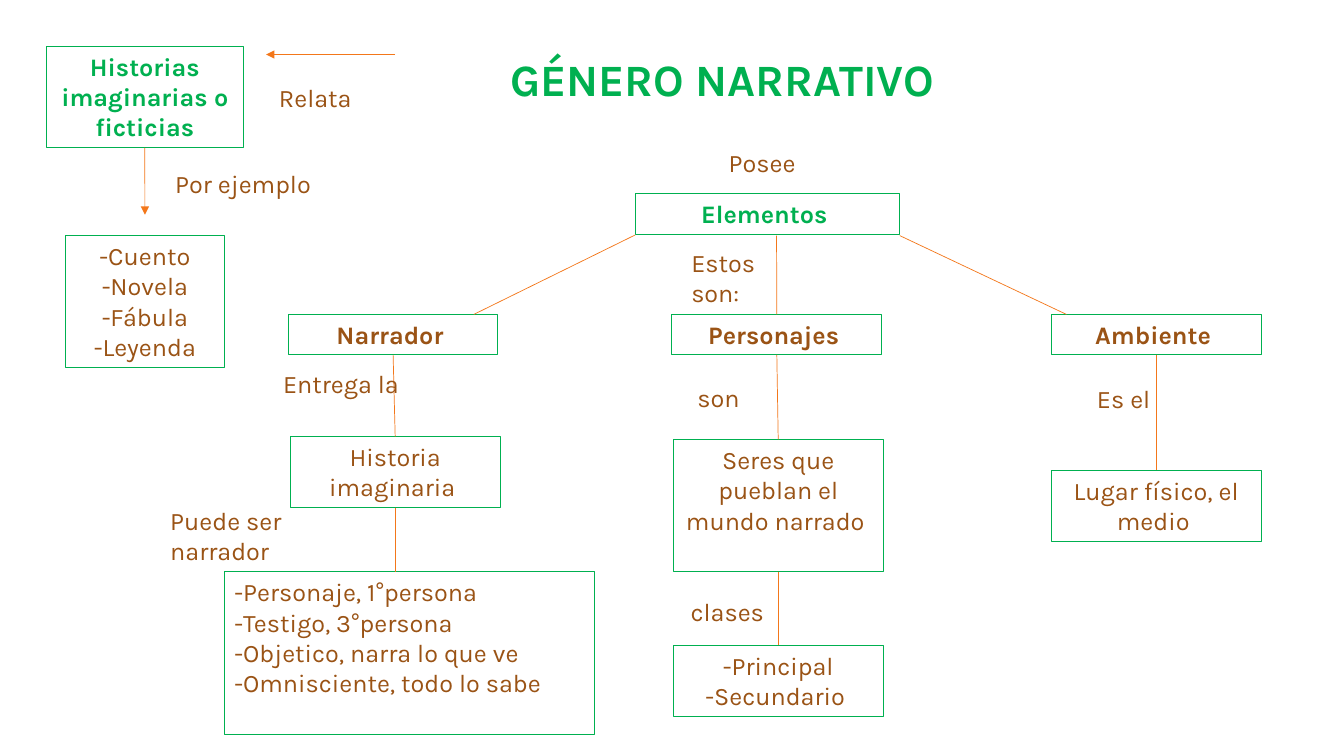
"""Build a concept map of the narrative genre."""
from lxml import etree
from pptx import Presentation
from pptx.dml.color import RGBColor
from pptx.enum.shapes import MSO_CONNECTOR, MSO_SHAPE
from pptx.enum.text import MSO_ANCHOR, MSO_AUTO_SIZE, PP_ALIGN
from pptx.oxml.ns import qn
from pptx.util import Pt

RECT = MSO_SHAPE.RECTANGLE
LINE = MSO_CONNECTOR.STRAIGHT
LEFT, MID = PP_ALIGN.LEFT, PP_ALIGN.CENTER
TOP, BASE = MSO_ANCHOR.TOP, MSO_ANCHOR.BOTTOM
FIXED = MSO_AUTO_SIZE.NONE
UP, DOWN = 0, 2

THEME = {
    "green": RGBColor.from_string("00B050"),
    "brown": RGBColor.from_string("9A5315"),
    "orange": RGBColor.from_string("F3771A"),
    "head": {"name": "Karla", "size": Pt(32), "bold": True},
    "strong": {"name": "Karla", "size": Pt(18), "bold": True},
    "plain": {"name": "Karla", "size": Pt(18), "bold": False},
    "frame": Pt(0.75),
    "link": Pt(0.5),
}
PAD, ROW = 7.2, 21.8
WIDE = 149.8

TITLE = ("GÉNERO NARRATIVO", (357.1, 12.2, 413.3, 67))

# name: (left, top, width, rows, lines, colour, style, align)
BOXES = {
    "story": (33.1, 33.1, 140.7, 3, ["Historias imaginarias o ficticias"], "green", "strong", MID),
    "kinds": (46.8, 168.3, 113.4, 4, ["-Cuento", "-Novela", "-Fábula", "-Leyenda"], "brown", "plain", MID),
    "parts": (453.8, 138.4, 188.8, 1, ["Elementos "], "green", "strong", MID),
    "teller": (205.9, 224.5, WIDE, 1, ["Narrador "], "brown", "strong", MID),
    "cast": (480, 224.5, WIDE, 1, ["Personajes "], "brown", "strong", MID),
    "place": (751, 224.5, WIDE, 1, ["Ambiente "], "brown", "strong", MID),
    "tale": (207.4, 311.8, WIDE, 2, ["Historia imaginaria "], "brown", "plain", MID),
    "voice": (160.4, 408.3, 264.3, 5, [
        "-Personaje, 1°persona", "-Testigo, 3°persona",
        "-Objetico, narra lo que ve", "-Omnisciente, todo lo sabe"], "brown", "plain", LEFT),
    "beings": (481, 313.9, WIDE, 4, ["Seres que pueblan el mundo narrado "], "brown", "plain", MID),
    "ranks": (481, 461, WIDE, 2, ["-Principal", "-Secundario "], "brown", "plain", MID),
    "scene": (751, 335.8, WIDE, 2, ["Lugar físico, el medio "], "brown", "plain", MID),
}

# (start, end, arrow); an end is a point or a (box, side) pair
LINKS = [
    ((554.7, 168.3), ("cast", UP), False),
    ((453.8, 167.8), (338.4, 224.6), False),
    ((642.7, 168.3), (761.8, 224.6), False),
    (("cast", DOWN), ("beings", UP), False),
    (("beings", DOWN), ("ranks", UP), False),
    (("place", DOWN), ("scene", UP), False),
    (("teller", DOWN), ("tale", UP), False),
    (("tale", DOWN), (282.3, 408.3), False),
    ((282.3, 38.9), (190.1, 38.9), True),
    (("story", DOWN), (103.5, 153.4), True),
]

# (text, left, top, width, rows)
LABELS = [
    ("Posee", 513.4, 101.5, 188.6, 1),
    ("Estos son:", 486.7, 172.8, 61.9, 2),
    ("Entrega la", 195.1, 259.5, 108, 2),
    ("Puede ser narrador", 114.5, 357.5, 140.4, 2),
    ("son", 491, 269.6, 54, 1),
    ("clases", 486.3, 422.3, 69.8, 1),
    ("Es el", 776.5, 270, 54.7, 2),
    ("Relata", 192.2, 55.2, 72.7, 1),
    ("Por ejemplo", 118.1, 116.9, 113, 2),
]


def apply(item, values):
    """Set each named value on an item."""
    for key, value in values.items():
        setattr(item, key, value)


def write(frame, lines, color, style, align, anchor=TOP):
    """Fill a text frame with styled lines."""
    apply(frame, {"word_wrap": True, "auto_size": FIXED, "vertical_anchor": anchor})
    frame.text = "\n".join(lines)
    for para in frame.paragraphs:
        para.alignment = align
        for run in para.runs:
            apply(run.font, THEME[style])
            run.font.color.rgb = THEME[color]


def area(left, top, width, rows):
    """Return a place whose height fits the rows."""
    return Pt(left), Pt(top), Pt(width), Pt(PAD + ROW * rows)


def add_box(slide, left, top, width, rows, lines, color, style, align):
    """Draw one framed box."""
    box = slide.shapes.add_shape(RECT, *area(left, top, width, rows))
    box.shadow.inherit = False
    box.fill.background()
    box.line.color.rgb = THEME["green"]
    box.line.width = THEME["frame"]
    write(box.text_frame, lines, color, style, align)
    return box


def add_link(slide, boxes, start, end, arrow):
    """Draw one line and join it to its boxes."""
    spots = [(0, 0) if spot[0] in boxes else spot for spot in (start, end)]
    link = slide.shapes.add_connector(LINE, *[Pt(n) for spot in spots for n in spot])
    for spot, join in ((start, link.begin_connect), (end, link.end_connect)):
        if spot[0] in boxes:
            join(boxes[spot[0]], spot[1])
    link.line.color.rgb = THEME["orange"]
    link.line.width = THEME["link"]
    props = link.element.spPr
    if arrow:
        etree.SubElement(props.find(qn("a:ln")), qn("a:tailEnd"), type="triangle")
    etree.SubElement(props, qn("a:effectLst"))


def main():
    """Build and save the slide."""
    deck = Presentation()
    apply(deck, {"slide_width": Pt(960), "slide_height": Pt(540)})
    slide = deck.slides.add_slide(deck.slide_layouts[5])
    text, place = TITLE
    title = slide.shapes.title
    apply(title, dict(zip(("left", "top", "width", "height"), map(Pt, place))))
    write(title.text_frame, [text], "green", "head", LEFT, BASE)
    title.text_frame.paragraphs[0].line_spacing = 0.9
    boxes = {name: add_box(slide, *data) for name, data in BOXES.items()}
    for link in LINKS:
        add_link(slide, boxes, *link)
    for text, *place in LABELS:
        label = slide.shapes.add_textbox(*area(*place))
        write(label.text_frame, [text], "brown", "plain", LEFT)
    deck.save("out.pptx")


if __name__ == "__main__":
    main()
